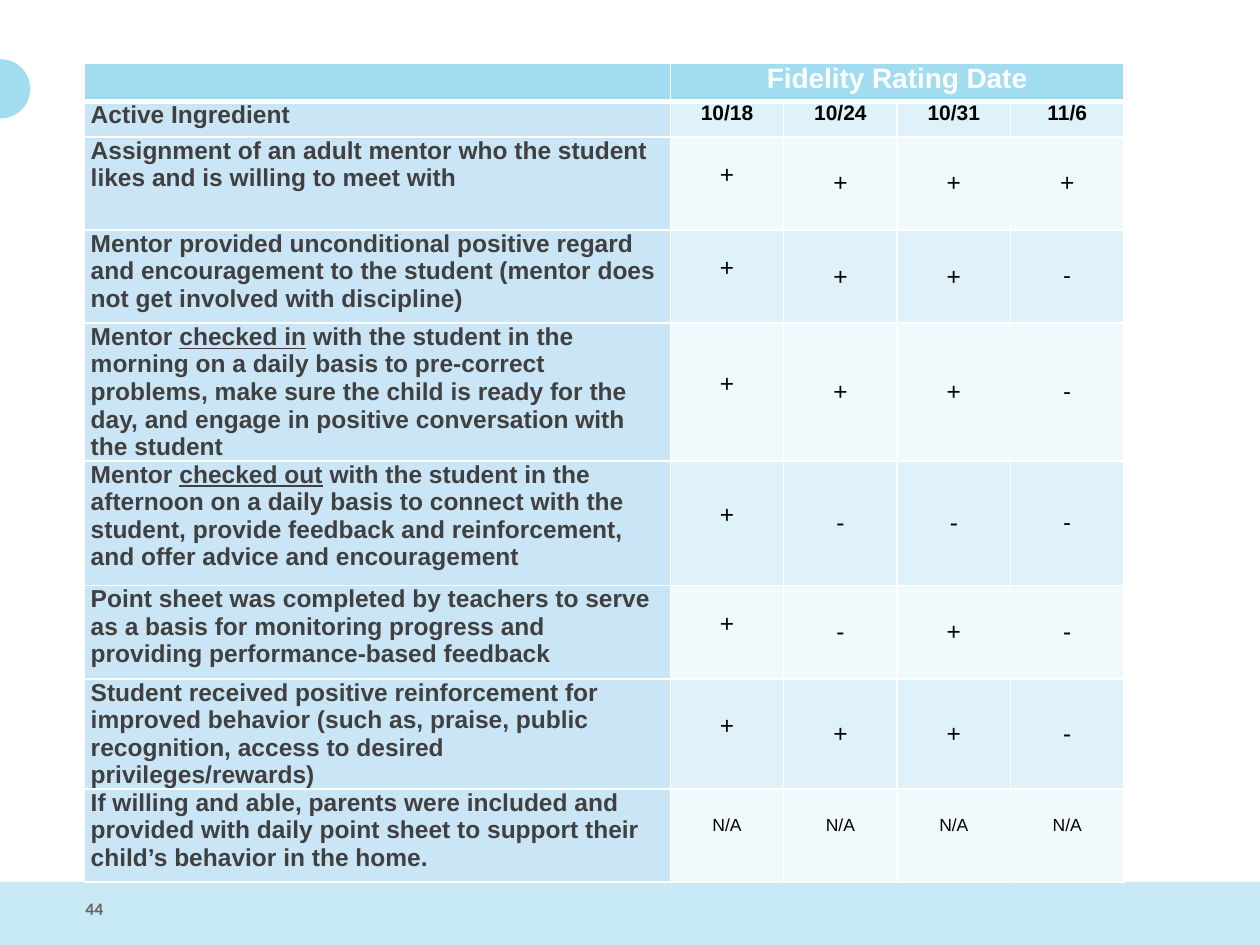
import pptx
import pptx.util
import pptx.dml.color
import pptx.enum.shapes
import pptx.enum.text
import pptx.oxml
import pptx.oxml.ns

Inches = pptx.util.Inches
Pt = pptx.util.Pt
ALIGN = pptx.enum.text.PP_ALIGN
ANCHOR = pptx.enum.text.MSO_ANCHOR
SHAPE = pptx.enum.shapes.MSO_SHAPE

DATES = ["10/18", "10/24", "10/31", "11/6"]
INGREDIENTS = [
    (0.74, ["Assignment of an adult mentor who the student likes and is willing to meet with"], "++++"),
    (0.74, ["Mentor provided unconditional positive regard and encouragement to the student "
            "(mentor does not get involved with discipline)"], "+++-"),
    (0.99, ["Mentor ", "checked in", " with the student in the morning on a daily basis to "
            "pre-correct problems, make sure the child is ready for the day, and engage in "
            "positive conversation with the student"], "+++-"),
    (0.99, ["Mentor ", "checked out", " with the student in the afternoon on a daily basis to "
            "connect with the student, provide feedback and reinforcement, and offer advice "
            "and encouragement"], "+---"),
    (0.74, ["Point sheet was completed by teachers to serve as a basis for monitoring progress "
            "and providing performance-based feedback"], "+-+-"),
    (0.74, ["Student received positive reinforcement for improved behavior (such as, praise, "
            "public recognition, access to desired privileges/rewards)"], "+++-"),
    (0.74, ["If willing and able, parents were included and provided with daily point sheet to "
            "support their child’s behavior in the home."], ["N/A"] * 4),
]
CALIBRI_ROWS = (3, 4, 5)


def rgb(color):
    """Turn a hex string into a colour."""
    return pptx.dml.color.RGBColor.from_string(color)


def add_run(p, text, size, color, bold=False, underline=False, font="Arial"):
    """Add one formatted run to a paragraph."""
    r = p.add_run()
    r.text = text
    r.font.name = font
    r.font.size = Pt(size)
    r.font.bold = bold
    r.font.underline = underline
    r.font.color.rgb = rgb(color)


def add_block(s, kind, left, top, width, height, color):
    """Add a plain filled shape."""
    sp = s.shapes.add_shape(kind, Inches(left), Inches(top), Inches(width), Inches(height))
    sp.shadow.inherit = False
    sp.fill.solid()
    sp.fill.fore_color.rgb = rgb(color)
    sp.line.fill.background()


def style_cell(cell, fill, top=1, bottom=1):
    """Set margins, white borders and fill of a cell."""
    cell.margin_left = cell.margin_right = Inches(0.05)
    cell.margin_top = cell.margin_bottom = 0
    tcPr = cell._tc.get_or_add_tcPr()
    for side, width in (("L", 1), ("R", 1), ("T", top), ("B", bottom)):
        tcPr.append(pptx.oxml.parse_xml(
            f'<a:ln{side} {pptx.oxml.ns.nsdecls("a")} w="{Pt(width)}"><a:solidFill>'
            f'<a:srgbClr val="FFFFFF"/></a:solidFill></a:ln{side}>'))
    cell.fill.solid()
    cell.fill.fore_color.rgb = rgb(fill)


def fill_rating(cell, row, col, rating):
    """Write one rating, raised a little in the first date column and for N/A."""
    cell.vertical_anchor = ANCHOR.MIDDLE
    p = cell.text_frame.paragraphs[0]
    p.alignment = ALIGN.CENTER
    if rating == "N/A":
        cell.margin_bottom = Inches(0.16)
        add_run(p, rating, 10, "000000")
        return
    if col == 1:
        cell.margin_bottom = Inches(0.13)
    font = "Calibri" if col == 4 and row in CALIBRI_ROWS else "Arial"
    add_run(p, rating, 14, "000000", font=font)


def add_fidelity_table(s, left, top, width, height):
    """Add the fidelity rating table inside the given box."""
    heights = [0.28, 0.28] + [h for h, _, _ in INGREDIENTS]
    tbl = s.shapes.add_table(len(heights), 5, Inches(left), Inches(top),
                             Inches(width), Inches(height)).table
    tbl.first_row = tbl.horz_banding = False
    date_width = 0.9
    for i, column in enumerate(tbl.columns):
        column.width = Inches(date_width if i else width - 4 * date_width)
    for i, h in enumerate(heights):
        tbl.rows[i].height = Inches(h)
        for j in range(5):
            band = "E0F2F9" if i % 2 else "F0F9FC"
            fill = "A2DCF0" if i == 0 else "CAE5F6" if j == 0 else band
            style_cell(tbl.cell(i, j), fill, 3 if i == 1 else 1, 3 if i == 0 else 1)

    tbl.cell(0, 1).merge(tbl.cell(0, 4))
    p = tbl.cell(0, 1).text_frame.paragraphs[0]
    p.alignment = ALIGN.CENTER
    add_run(p, "Fidelity Rating Date", 16, "FFFFFF", True)
    p = tbl.cell(1, 0).text_frame.paragraphs[0]
    add_run(p, "Active Ingredient", 14, "404040", True)
    for j, date in enumerate(DATES, 1):
        p = tbl.cell(1, j).text_frame.paragraphs[0]
        p.alignment = ALIGN.CENTER
        add_run(p, date, 12, "000000", True)

    for i, (_, parts, ratings) in enumerate(INGREDIENTS, 2):
        p = tbl.cell(i, 0).text_frame.paragraphs[0]
        for k, part in enumerate(parts):
            add_run(p, part, 14, "404040", True, underline=k == 1)
        for j, rating in enumerate(ratings, 1):
            fill_rating(tbl.cell(i, j), i, j, rating)


def add_page_number(s, left, top, width, height):
    """Add the page number in the footer."""
    tf = s.shapes.add_textbox(Inches(left), Inches(top), Inches(width), Inches(height)).text_frame
    tf.word_wrap = True
    add_run(tf.paragraphs[0], "44", 10, "696464", True, font="Calibri")


def main():
    """Build the slide and save it."""
    prs = pptx.Presentation()
    prs.slide_width, prs.slide_height = Inches(10), Inches(7.5)
    s = prs.slides.add_slide(prs.slide_layouts[6])
    add_block(s, SHAPE.RECTANGLE, 0, 7, 10, 0.5, "C7EAF6")
    add_block(s, SHAPE.OVAL, -0.23, 0.47, 0.47, 0.47, "A2DCF0")
    add_fidelity_table(s, 0.67, 0.5, 8.25, 6.25)
    add_page_number(s, 0.58, 7.08, 0.62, 0.25)
    prs.save("out.pptx")


if __name__ == "__main__":
    main()
